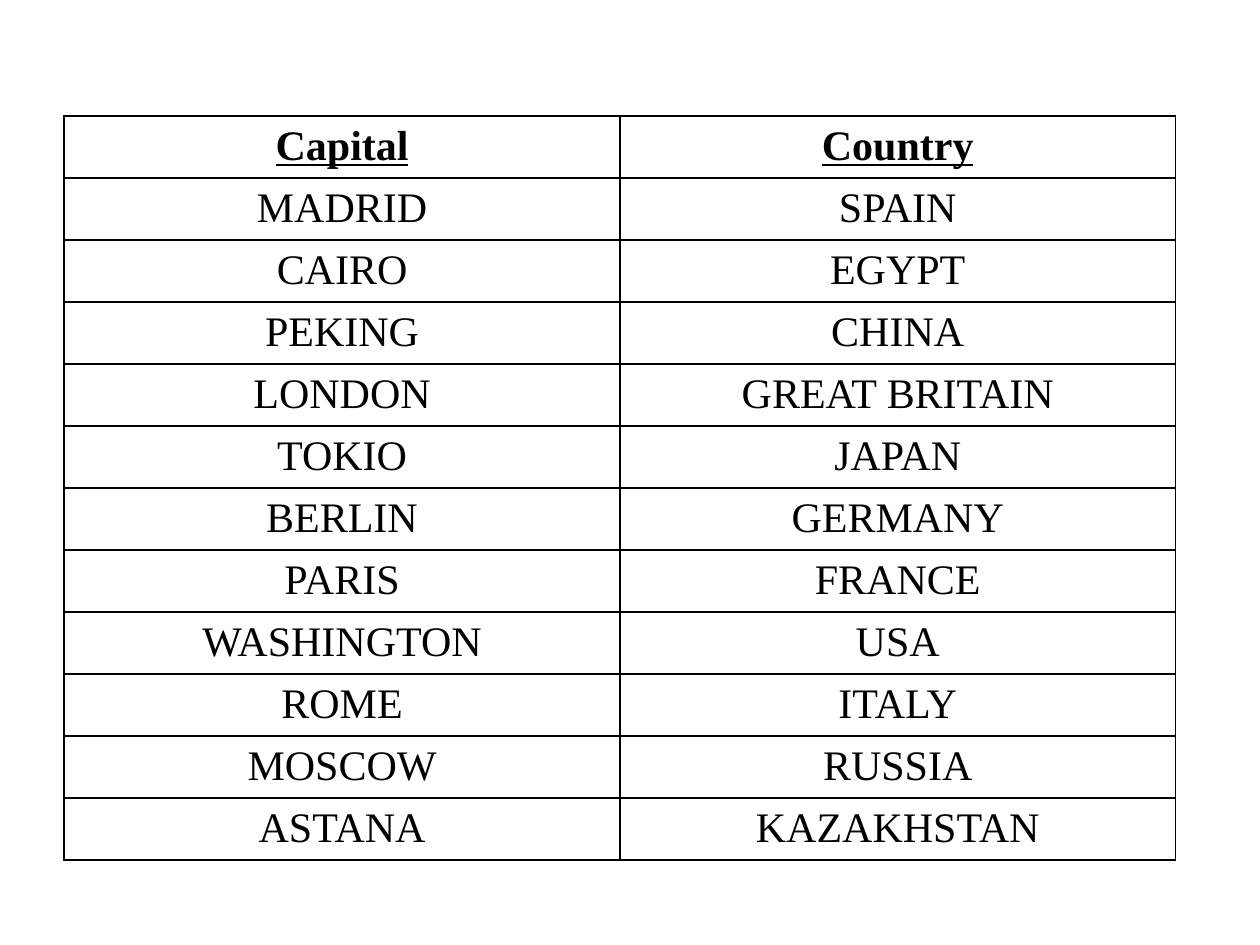
from lxml import etree
from pptx import Presentation
from pptx.dml.color import RGBColor
from pptx.enum import text
from pptx.oxml.ns import qn
from pptx.util import Inches, Pt

COLORS = {"ink": "000000"}
FONT = "Times New Roman"
HEADINGS = ("Capital", "Country")
CAPITALS = [
    ("MADRID", "SPAIN"),
    ("CAIRO", "EGYPT"),
    ("PEKING", "CHINA"),
    ("LONDON", "GREAT BRITAIN"),
    ("TOKIO", "JAPAN"),
    ("BERLIN", "GERMANY"),
    ("PARIS", "FRANCE"),
    ("WASHINGTON", "USA"),
    ("ROME", "ITALY"),
    ("MOSCOW", "RUSSIA"),
    ("ASTANA", "KAZAKHSTAN"),
]
COLUMN_WIDTH = 4.41
ROW_HEIGHT = 0.4925


def write_text(tf, content, size=24, bold=False, underline=False, color="ink"):
    p = tf.paragraphs[0]
    p.alignment = text.PP_ALIGN.CENTER
    p.line_spacing = 1.15
    r = p.add_run()
    r.text = content
    r.font.name = FONT
    r.font.size = Pt(size)
    r.font.bold = bold
    r.font.underline = underline
    r.font.color.rgb = RGBColor.from_string(COLORS[color])


def set_borders(cell, color="ink", width=1):
    """Draw all four sides; borders must come before the fill in tcPr."""
    tc_pr = cell._tc.get_or_add_tcPr()
    for i, side in enumerate(("a:lnL", "a:lnR", "a:lnT", "a:lnB")):
        ln = etree.Element(qn(side), w=str(Pt(width)))
        fill = etree.SubElement(ln, qn("a:solidFill"))
        etree.SubElement(fill, qn("a:srgbClr"), val=COLORS[color])
        tc_pr.insert(i, ln)


def format_cell(cell):
    cell.margin_left = cell.margin_right = Inches(0.07)
    cell.margin_top = cell.margin_bottom = 0
    cell.vertical_anchor = text.MSO_ANCHOR.TOP
    cell.fill.background()
    set_borders(cell)


def add_grid(s, left, top, rows):
    n_rows, n_cols = len(rows), len(rows[0])
    table = s.shapes.add_table(
        n_rows, n_cols, Inches(left), Inches(top),
        Inches(n_cols * COLUMN_WIDTH), Inches(n_rows * ROW_HEIGHT)).table
    table.horz_banding = False
    table.first_row = False
    for column in table.columns:
        column.width = Inches(COLUMN_WIDTH)
    for i, values in enumerate(rows):
        table.rows[i].height = Inches(ROW_HEIGHT)
        for j, value in enumerate(values):
            cell = table.cell(i, j)
            format_cell(cell)
            write_text(cell.text_frame, value, bold=i == 0, underline=i == 0)


def main():
    prs = Presentation()
    prs.slide_width, prs.slide_height = Inches(10), Inches(7.5)
    s = prs.slides.add_slide(prs.slide_layouts[6])
    add_grid(s, 0.51, 0.92, [HEADINGS, *CAPITALS])
    prs.save("out.pptx")


if __name__ == "__main__":
    main()
